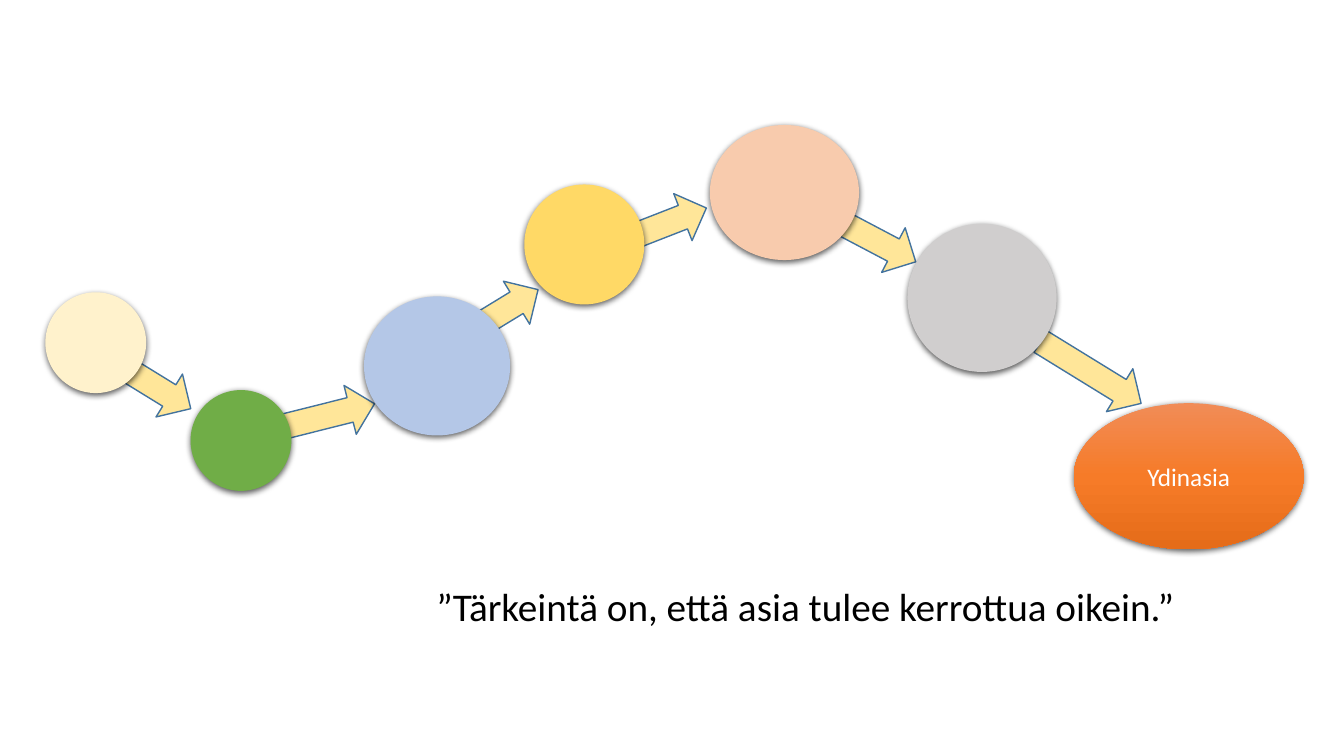
from pptx import Presentation
from pptx.dml.color import RGBColor
from pptx.enum.shapes import MSO_SHAPE as Preset
from pptx.enum.text import MSO_ANCHOR as Anchor, MSO_AUTO_SIZE as AutoSize, PP_ALIGN as Align
from pptx.oxml import parse_xml
from pptx.oxml.ns import nsdecls, qn
from pptx.util import Inches, Pt


def color(value):
    return RGBColor.from_string(value)


def element(markup):
    return parse_xml(markup.replace(" ", f" {nsdecls('a')} ", 1))


def apply(target, values):
    for name, value in values.items():
        setattr(target, name, value)


class StorySlide:
    """Draws the arrows, circles and texts of a story path on one slide."""

    font = "Calibri"
    arrow_fill, arrow_line = "FFE699", "43739E"
    shadow = (
        '<a:outerShdw blurRad="57150" dist="19050" dir="5400000" algn="ctr" rotWithShape="0">'
        '<a:srgbClr val="000000"><a:alpha val="63000"/></a:srgbClr></a:outerShdw>'
    )

    def __init__(self, page):
        self.page = page

    def shape(self, preset, place):
        shape = self.page.shapes.add_shape(preset, *map(Inches, place))
        shape.shadow.inherit = False
        return shape

    def arrow(self, left, top, length, rotation):
        arrow = self.shape(Preset.DOWN_ARROW, (left, top, 0.5, length))
        arrow.rotation = rotation
        arrow.fill.solid()
        arrow.fill.fore_color.rgb = color(self.arrow_fill)
        arrow.line.color.rgb = color(self.arrow_line)
        arrow.line.width = Pt(1)

    def circle(self, place, *fills):
        circle = self.shape(Preset.OVAL, place)
        circle.line.fill.background()
        if len(fills) == 1:
            circle.fill.solid()
            circle.fill.fore_color.rgb = color(fills[0])
        else:
            self.gradient(circle, fills)
        effects = circle._element.spPr.find(qn("a:effectLst"))
        effects.append(element(self.shadow))
        return circle

    def gradient(self, shape, fills):
        shape.fill.gradient()
        shape.fill.gradient_angle = 270
        stops = shape._element.spPr.find(".//" + qn("a:gsLst"))
        for stop in list(stops):
            stops.remove(stop)
        for index, fill in enumerate(fills):
            position = 100000 * index // (len(fills) - 1)
            stops.append(element(f'<a:gs pos="{position}"><a:srgbClr val="{fill}"/></a:gs>'))

    def add_text(self, frame, text, size, ink, align):
        para = frame.paragraphs[0]
        para.alignment = align
        span = para.add_run()
        span.text = text
        apply(span.font, {"name": self.font, "size": Pt(size)})
        span.font.color.rgb = color(ink)

    def label(self, shape, text):
        shape.text_frame.vertical_anchor = Anchor.MIDDLE
        self.add_text(shape.text_frame, text, 18, "FFFFFF", Align.CENTER)

    def quote(self, place, text):
        box = self.page.shapes.add_textbox(*map(Inches, place))
        apply(box.text_frame, {"word_wrap": False, "auto_size": AutoSize.SHAPE_TO_FIT_TEXT})
        self.add_text(box.text_frame, text, 28, "000000", Align.LEFT)


ARROWS = [
    (10.57, 3.11, 1.17, 301.6),
    (1.31, 3.46, 0.78, 301.6),
    (8.43, 1.93, 0.91, 297.8),
    (6.02, 1.56, 1.58, 248.7),
    (4.6, 2.6, 1.14, 238.6),
    (2.83, 3.51, 1.31, 255.9),
]
CIRCLES = [
    ((1.89, 3.87, 1, 1), "70AD47"),
    ((3.61, 2.94, 1.45, 1.38), "B4C7E7"),
    ((5.2, 1.83, 1.19, 1.19), "FFD966"),
    ((7.04, 1.24, 1.48, 1.34), "F8CBAD"),
    ((9, 2.22, 1.48, 1.47), "D0CECE"),
    ((0.45, 2.9, 1, 1), "FFF2CC"),
]


def main():
    deck = Presentation()
    apply(deck, {"slide_width": Inches(13.33), "slide_height": Inches(7.5)})
    story = StorySlide(deck.slides.add_slide(deck.slide_layouts[6]))
    for arrow in ARROWS:
        story.arrow(*arrow)
    core = story.circle((10.65, 4, 2.28, 1.45), "F18C57", "F67B28", "E56C19")
    story.label(core, "Ydinasia")
    for place, fill in CIRCLES:
        story.circle(place, fill)
    story.quote((4.23, 5.73, 7.61, 0.57), "”Tärkeintä on, että asia tulee kerrottua oikein.”")
    deck.save("out.pptx")


if __name__ == "__main__":
    main()
